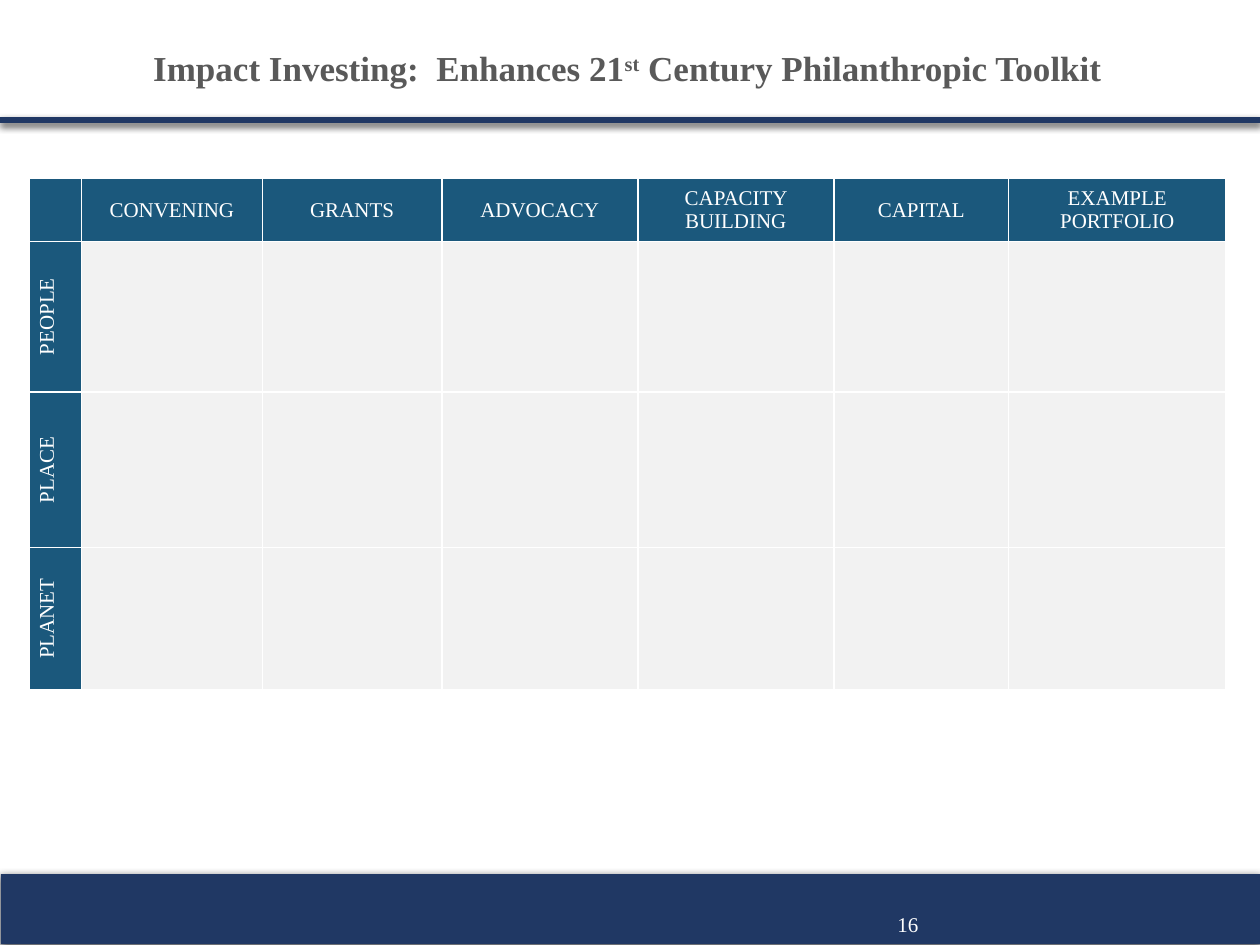
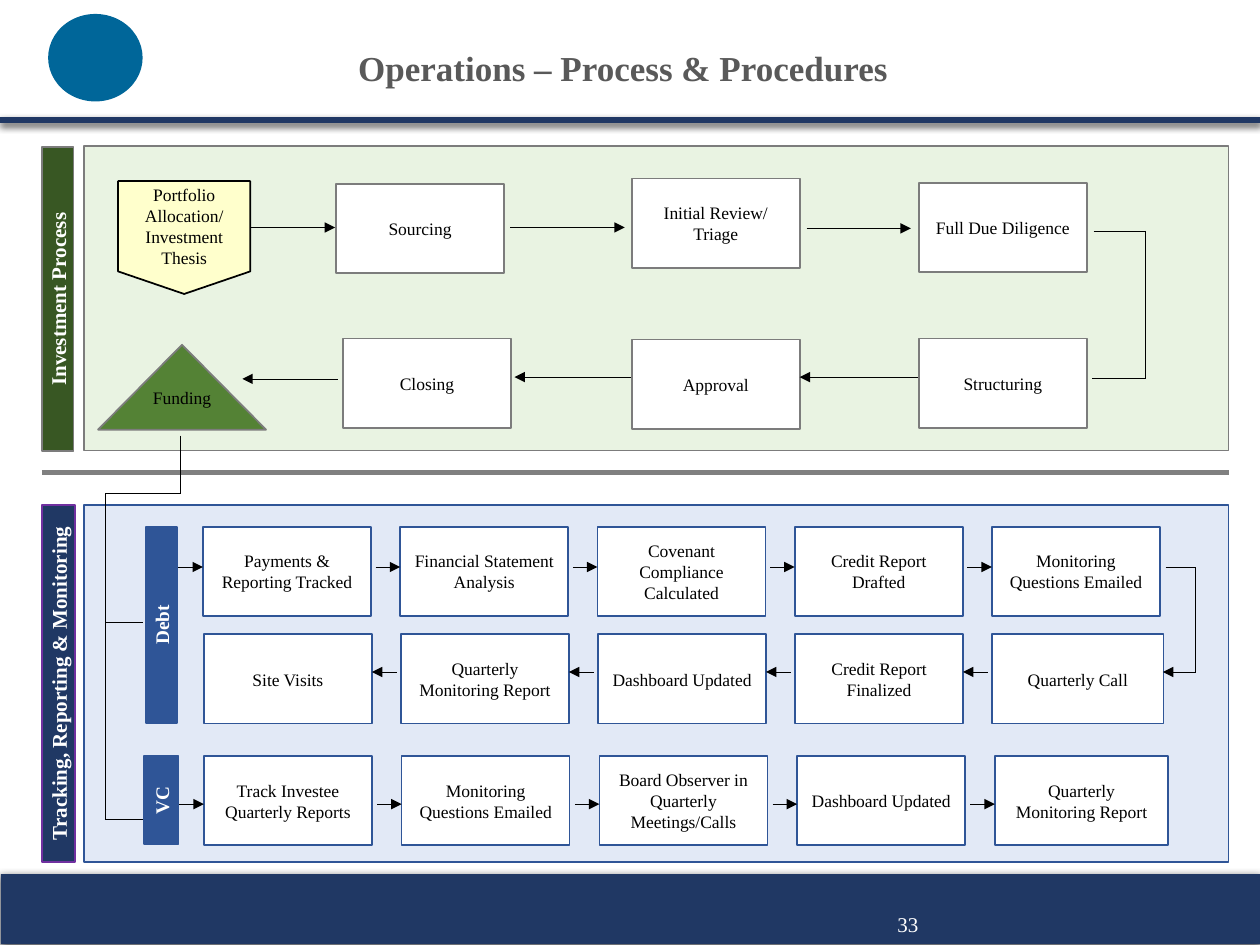
from itertools import pairwise
from lxml import etree
from pptx import Presentation
from pptx.dml.color import RGBColor
from pptx.enum import dml, shapes, text
from pptx.oxml.ns import qn
from pptx.util import Pt

FONT = "Times New Roman"
HUE = {
    "navy": "203864", "white": "FFFFFF", "black": "000000", "grey": "595959",
    "teal": "1B587C", "pale": "F2F2F2", "rim": "7C7C7C", "rule": "808080",
    "blue": "2F5597", "sky": "8FAADC", "leaf": "A9D18E", "green": "548235",
    "forest": "385723", "purple": "7030A0", "cream": "FFFFCC", "logo": "006699",
}
KIND = shapes.MSO_SHAPE

# Slide 1 content
TOOLS = [("Impact Investing:  Enhances 21", 0), ("st", 30000),
         (" Century Philanthropic Toolkit", 0)]
HEADS = ["", "CONVENING", "GRANTS", "ADVOCACY", "CAPACITY BUILDING",
         "CAPITAL", "EXAMPLE PORTFOLIO"]
SIDES = ["PEOPLE", "PLACE", "PLANET"]
COLS = [30, 103.5, 102.5, 112, 112, 100, 124]
ROWS = [35, 86, 89, 81]

# Slide 2 content
STEPS = [("Sourcing", 192, 105), ("Initial Review/ Triage", 361, 102),
         ("Full Due Diligence", 525, 104.5), ("Structuring", 525, 193.5),
         ("Approval", 361, 194), ("Closing", 196, 193.5)]
LANES = [  # left, pitch, top, arrow height, last width, arrows go right, steps
    (116, 112.7, 301, 324, 96, True,
     ["Payments & Reporting Tracked", "Financial Statement Analysis",
      "Covenant Compliance Calculated", "Credit Report Drafted",
      "Monitoring Questions Emailed"]),
    (116.5, 112.6, 362.5, 384, 98, False,
     ["Site Visits", "Quarterly Monitoring Report", "Dashboard Updated",
      "Credit Report Finalized", "Quarterly Call"]),
    (116.5, 113, 432, 459.5, 99, True,
     ["Track Investee Quarterly Reports", "Monitoring Questions Emailed",
      "Board Observer in Quarterly Meetings/Calls", "Dashboard Updated",
      "Quarterly Monitoring Report"]),
]
PANELS = [((48, 83.5, 654, 174), "leaf", "rim"),
          ((48, 288.5, 654, 204), "sky", "blue")]
TAGS = [("Investment Process", (24, 84, 18, 174), "forest", "rim", 12),
        ("Tracking, Reporting & Monitoring", (24, 288.5, 19, 204),
         "navy", "purple", 12),
        ("Debt", (83.5, 301, 17.5, 112), "blue", "blue", 11),
        ("VC", (82.5, 432, 19.5, 50.5), "blue", "blue", 11)]
FLOWS = [[(143.5, 130), (191.5, 130)], [(291.5, 130), (357, 130)],
         [(461, 130.5), (520.5, 130.5)], [(524, 215.5), (457, 215.5)],
         [(360, 215.5), (294, 215.5)], [(193, 216.5), (138.5, 216.5)],
         [(683, 324), (683, 384), (664.5, 384)]]
LINKS = [[(625, 132), (654.5, 132), (654.5, 216), (624, 216)],
         [(666, 324), (683, 324)],
         [(103, 249), (103, 282), (60, 282), (60, 468), (81.5, 468)],
         [(81.5, 355.5), (60, 355.5)]]


def hue(name):
    return RGBColor.from_string(HUE[name])


def child(node, tag, **attrs):
    return etree.SubElement(node, qn(tag), **attrs)


def write(frame, words, size, color, bold=False):
    """Add centred runs; words is a string or a list of (string, baseline)."""
    para = frame.paragraphs[0]
    para.alignment = text.PP_ALIGN.CENTER
    for part, base in [(words, 0)] if isinstance(words, str) else words:
        run = para.add_run()
        run.text = part
        font = run.font
        font.name, font.size, font.bold = FONT, Pt(size), bold
        font.color.rgb = hue(color)
        if base:
            font._element.set("baseline", str(base))


def put(slide, kind, area, fill, edge=None, width=1):
    shape = slide.shapes.add_shape(kind, *map(Pt, area))
    shape.fill.solid()
    shape.fill.fore_color.rgb = hue(fill)
    if edge:
        shape.line.color.rgb = hue(edge)
        shape.line.width = Pt(width)
    else:
        shape.line.fill.background()
    shape.shadow.inherit = False
    return shape


def step(slide, words, area, edge, fill="white", kind=KIND.FLOWCHART_PROCESS):
    frame = put(slide, kind, area, fill, edge).text_frame
    frame.word_wrap = True
    frame.margin_top = frame.margin_bottom = 0
    frame.vertical_anchor = text.MSO_ANCHOR.MIDDLE
    write(frame, words, 10, "black")
    return frame


def line(slide, start, end, color="black", width=0.25, dots=True, arrow=False):
    link = slide.shapes.add_connector(shapes.MSO_CONNECTOR.STRAIGHT,
                                      *map(Pt, start + end))
    link.line.color.rgb = hue(color)
    link.line.width = Pt(width)
    if dots:
        link.line.dash_style = dml.MSO_LINE.ROUND_DOT
    if arrow:
        child(link.line._get_or_add_ln(), "a:tailEnd", type="triangle")
    child(link._element.spPr, "a:effectLst")


def route(slide, points, arrow=False):
    for start, end in pairwise(points):
        line(slide, start, end, arrow=arrow and end == points[-1])


def page(deck, title, area, number):
    """Start a slide with the shared bands, number and title."""
    slide = deck.slides.add_slide(deck.slide_layouts[5])
    for band, edge in [((0.5, 499.5, 720, 40), None), ((0, 67, 720, 3), "navy")]:
        shape = put(slide, KIND.RECTANGLE, band, "navy", edge, 0.75)
        glow = child(shape._element.spPr.find(qn("a:effectLst")), "a:outerShdw",
                     blurRad=str(Pt(4.5)), dist=str(Pt(1.5)), dir="5400000",
                     rotWithShape="0")
        child(child(glow, "a:srgbClr", val=HUE["black"]), "a:alpha", val="63000")
    box = slide.shapes.add_textbox(*map(Pt, (499, 513.5, 39.5, 29))).text_frame
    box.word_wrap = True
    box.vertical_anchor = text.MSO_ANCHOR.MIDDLE
    write(box, number, 12, "white")
    head = slide.shapes.title
    head.left, head.top, head.width, head.height = map(Pt, area)
    head.text_frame.vertical_anchor = text.MSO_ANCHOR.MIDDLE
    write(head.text_frame, title, 20, "grey", True)
    return slide


def cell_style(cell, fill):
    cell.fill.solid()
    cell.fill.fore_color.rgb = hue(fill)
    cell.vertical_anchor = text.MSO_ANCHOR.MIDDLE
    props = cell._tc.get_or_add_tcPr()
    for spot, side in enumerate("LRTB"):
        edge = etree.Element(qn("a:ln" + side), w=str(Pt(1)))
        child(child(edge, "a:solidFill"), "a:srgbClr", val=HUE["white"])
        props.insert(spot, edge)


def toolkit(deck):
    slide = page(deck, TOOLS, (29.5, 18.5, 658, 40.5), "16")
    grid = slide.shapes.add_table(len(ROWS), len(COLS), Pt(16.5), Pt(102),
                                  Pt(sum(COLS)), Pt(sum(ROWS))).table
    grid.first_row = grid.horz_banding = False
    for col, wide in zip(grid.columns, COLS):
        col.width = Pt(wide)
    for row, tall in zip(grid.rows, ROWS):
        row.height = Pt(tall)
    for r in range(len(ROWS)):
        for c in range(len(COLS)):
            cell = grid.cell(r, c)
            cell_style(cell, "pale" if r and c else "teal")
            words = HEADS[c] if r == 0 else SIDES[r - 1] if c == 0 else ""
            if words:
                write(cell.text_frame, words, 12, "white")
            if r and not c:
                cell._tc.tcPr.set("vert", "vert270")


def process(deck):
    slide = page(deck, "Operations – Process & Procedures",
                 (14.5, 18.5, 683, 40.5), "33")
    put(slide, KIND.OVAL, (27.5, 8, 54, 50), "logo")

    # Panels, divider and side tags
    for area, fill, edge in PANELS:
        panel = put(slide, KIND.RECTANGLE, area, fill, edge)
        tint = panel._element.spPr.find(qn("a:solidFill"))[0]
        child(tint, "a:alpha", val="25000")
    line(slide, (24, 270), (702, 270), "rule", 3, dots=False)
    for words, area, fill, edge, size in TAGS:
        frame = put(slide, KIND.RECTANGLE, area, fill, edge).text_frame
        frame._txBody.bodyPr.set("vert", "vert270")
        frame.word_wrap = False
        frame.margin_left = frame.margin_right = 0
        frame.margin_top = frame.margin_bottom = 0
        frame.vertical_anchor = text.MSO_ANCHOR.MIDDLE
        write(frame, words, size, "white", True)

    # Investment steps
    step(slide, "Portfolio Allocation/ Investment Thesis",
         (67.5, 103.5, 75.5, 64.5), "black", "cream",
         KIND.FLOWCHART_OFFPAGE_CONNECTOR)
    fund = step(slide, "Funding", (56, 197, 96, 48.5), "rim", "green",
                KIND.FLOWCHART_EXTRACT)
    fund.vertical_anchor = text.MSO_ANCHOR.TOP
    for words, left, top in STEPS:
        step(slide, words, (left, top, 96, 51), "rim")

    # Monitoring lanes, each box with the arrow that belongs to it
    for left, pitch, top, mid, last, right, names in LANES:
        for i, words in enumerate(names):
            x = left + i * pitch
            final = i == len(names) - 1
            wide = last if final else 96
            step(slide, words, (x, top, wide, 51), "blue")
            if right:
                line(slide, (x - 14, mid), (x, mid), arrow=True)
            elif not final:
                line(slide, (x + wide + 14, mid), (x + wide, mid), arrow=True)

    # Other arrows and links
    for points in FLOWS:
        route(slide, points, arrow=True)
    for points in LINKS:
        route(slide, points)


def main():
    deck = Presentation()
    deck.slide_width, deck.slide_height = Pt(720), Pt(540)
    toolkit(deck)
    process(deck)
    deck.save("out.pptx")


if __name__ == "__main__":
    main()
